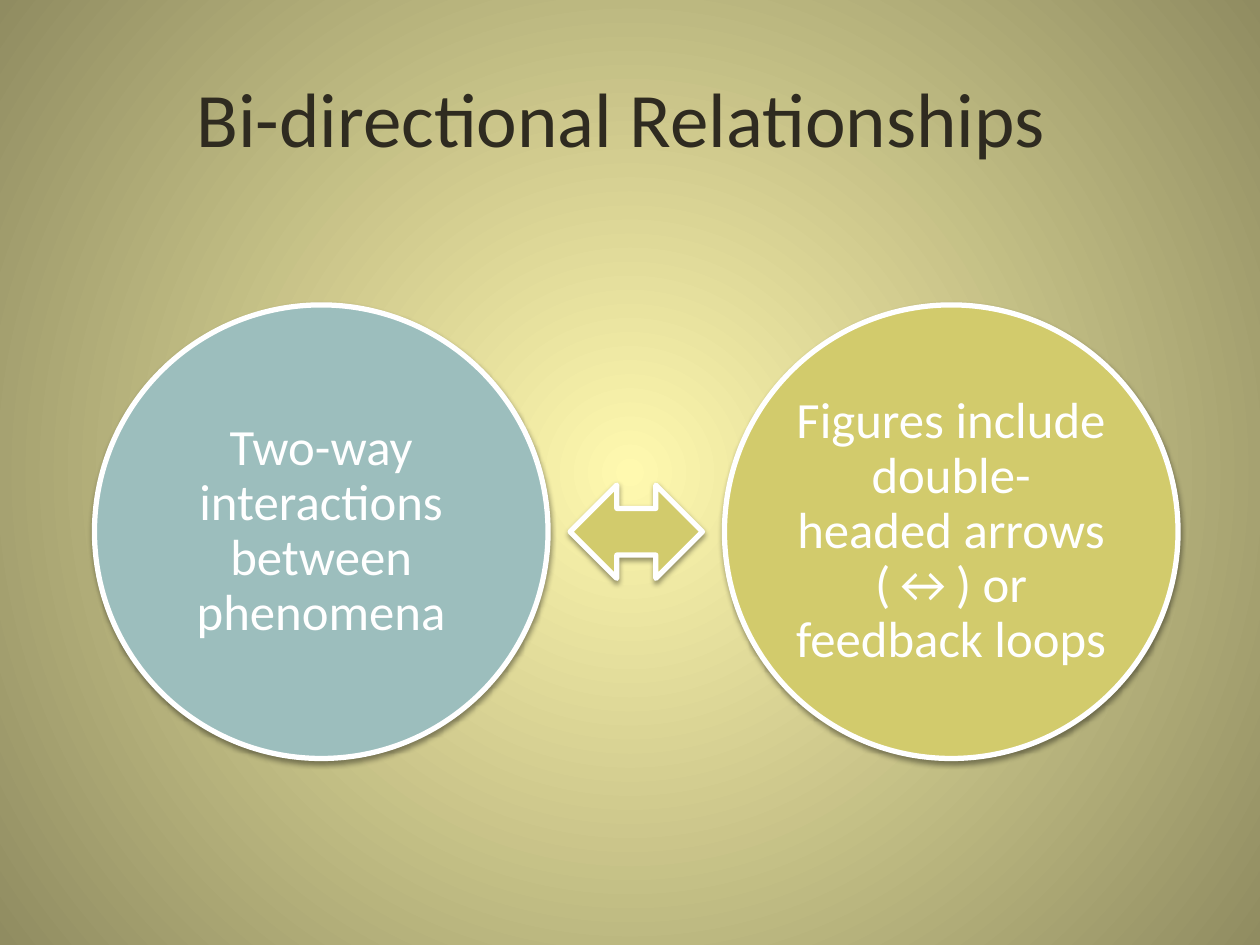
import pptx
import pptx.dml.color
import pptx.enum.shapes
import pptx.enum.text
import pptx.oxml
import pptx.oxml.ns
import pptx.util

THEME = {
    "font": "Calibri",
    "title_size": 44,
    "body_size": 29,
    "line_width": 3,
    "glow": "FFF9AF",
    "edge": "908C61",
    "ink": "2F2B20",
    "white": "FFFFFF",
    "teal": "9CBEBD",
    "olive": "D2CB6C",
}
SHADOW = (
    f'<a:outerShdw {pptx.oxml.ns.nsdecls("a")} blurRad="{pptx.util.Pt(3.1)}" '
    f'dist="{pptx.util.Pt(1.6)}" dir="5400000" rotWithShape="0">'
    '<a:srgbClr val="000000"><a:alpha val="38000"/></a:srgbClr></a:outerShdw>'
)
RADIAL = (
    f'<a:path {pptx.oxml.ns.nsdecls("a")} path="circle">'
    '<a:fillToRect l="50000" t="50000" r="50000" b="50000"/></a:path>'
)


def color(name):
    return pptx.dml.color.RGBColor.from_string(THEME[name])


def add_figure(kind, left, top, width, height, fill):
    box = page.shapes.add_shape(kind, left, top, width, height)
    box.fill.solid()
    box.fill.fore_color.rgb = color(fill)
    box.line.color.rgb = color("white")
    box.line.width = pptx.util.Pt(THEME["line_width"])
    box.shadow.inherit = False
    effects = box._element.spPr.find(pptx.oxml.ns.qn("a:effectLst"))
    effects.append(pptx.oxml.parse_xml(SHADOW))
    return box


deck = pptx.Presentation()
deck.slide_width = pptx.util.Inches(10)
deck.slide_height = pptx.util.Inches(7.5)
inch = deck.slide_width // 10
page = deck.slides.add_slide(deck.slide_layouts[5])

backdrop = page.background.fill
backdrop.gradient()
for stop, position, name in zip(backdrop.gradient_stops, (0, 1), ("glow", "edge")):
    stop.position = position
    stop.color.rgb = color(name)
linear = next(page._element.iter(pptx.oxml.ns.qn("a:lin")))
linear.getparent().replace(linear, pptx.oxml.parse_xml(RADIAL))

title = page.shapes.title
title.left, title.top = int(0.5 * inch), int(0.3 * inch)
title.width, title.height = 9 * inch, int(1.25 * inch)
title.text_frame.text = "Bi-directional Relationships "
title.text_frame.vertical_anchor = pptx.enum.text.MSO_ANCHOR.MIDDLE
para = title.text_frame.paragraphs[0]
para.alignment = pptx.enum.text.PP_ALIGN.CENTER
para.font.name = THEME["font"]
para.font.size = pptx.util.Pt(THEME["title_size"])
para.font.color.rgb = color("ink")

first_left, column_step = int(0.75 * inch), 5 * inch
diameter, circle_top = int(3.6 * inch), int(2.42 * inch)
arrow_width, arrow_height = int(1.05 * inch), int(0.74 * inch)

circles = [
    ("Two-way interactions between phenomena", "teal"),
    ("Figures include double-headed arrows (↔) or feedback loops", "olive"),
]
for column, (words, fill) in enumerate(circles):
    circle = add_figure(
        pptx.enum.shapes.MSO_SHAPE.OVAL,
        first_left + column * column_step, circle_top, diameter, diameter, fill,
    )
    frame = circle.text_frame
    frame.word_wrap = True
    frame.vertical_anchor = pptx.enum.text.MSO_ANCHOR.MIDDLE
    frame.margin_left = frame.margin_right = pptx.util.Inches(0.04)
    frame.margin_top = frame.margin_bottom = pptx.util.Inches(0.04)
    frame.text = words
    para = frame.paragraphs[0]
    para.alignment = pptx.enum.text.PP_ALIGN.CENTER
    para.line_spacing = 0.9
    para.font.name = THEME["font"]
    para.font.size = pptx.util.Pt(THEME["body_size"])
    para.font.color.rgb = color("white")

arrow = add_figure(
    pptx.enum.shapes.MSO_SHAPE.LEFT_RIGHT_ARROW,
    first_left + (column_step + diameter - arrow_width) // 2,
    circle_top + (diameter - arrow_height) // 2,
    arrow_width, arrow_height, "olive",
)
arrow.rotation = 180

deck.save("out.pptx")
